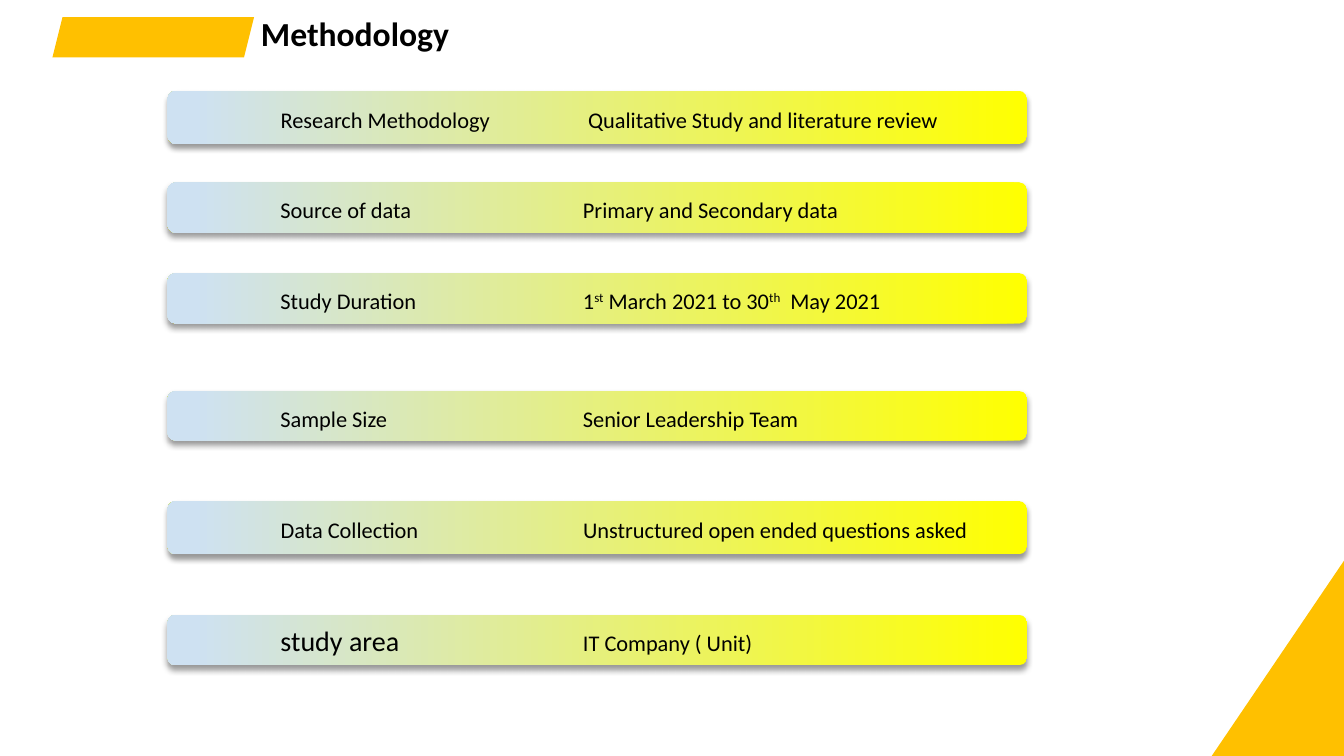
from lxml import etree
from pptx import Presentation
from pptx.dml.color import RGBColor
from pptx.enum.shapes import MSO_SHAPE
from pptx.enum.text import MSO_ANCHOR, PP_ALIGN
from pptx.oxml.ns import qn
from pptx.util import Inches, Pt

ROUNDED = MSO_SHAPE.ROUNDED_RECTANGLE
RECTANGLE = MSO_SHAPE.RECTANGLE
PARALLELOGRAM = MSO_SHAPE.PARALLELOGRAM
MIDDLE = MSO_ANCHOR.MIDDLE
LEFT = PP_ALIGN.LEFT

COLORS = {
    "amber": "FFC000",
    "yellow": "FFFF00",
    "pale_blue": "CEE1F2",
    "text": "000000",
}
FONT = "Calibri"
BAR_LEFT, BAR_WIDTH = 1.66, 8.53
TAB_STOPS = (1, 4)

# top, height, label, label size, value as (text, is superscript) parts
BARS = [
    (0.9, 0.53, "Research Methodology", 16,
     [(" Qualitative Study and literature review", False)]),
    (1.81, 0.5, "Source of data", 16, [("Primary and Secondary data", False)]),
    (2.71, 0.5, "Study Duration", 16,
     [("1", False), ("st", True), (" March 2021 to 30", False),
      ("th", True), ("  May 2021", False)]),
    (3.88, 0.49, "Sample Size", 16, [("Senior Leadership Team", False)]),
    (4.97, 0.53, "Data Collection", 16,
     [("Unstructured open ended questions asked", False)]),
    (6.1, 0.5, "study area", 20, [("IT Company ( Unit)", False)]),
]


def rgb(name):
    return RGBColor.from_string(COLORS[name])


def add_run(paragraph, text, size, bold=False, superscript=False):
    run = paragraph.add_run()
    run.text = text
    run.font.name = FONT
    run.font.size = Pt(size)
    run.font.bold = bold
    run.font.color.rgb = rgb("text")
    if superscript:
        run._r.get_or_add_rPr().set("baseline", "30000")


def add_plain_shape(slide, kind, left, top, width, height):
    """Add a preset shape without outline or shadow."""
    shape = slide.shapes.add_shape(
        kind, Inches(left), Inches(top), Inches(width), Inches(height))
    shape.shadow.inherit = False
    shape.line.fill.background()
    return shape


def add_accent(slide, kind, left, top, width, height, rotation=0):
    shape = add_plain_shape(slide, kind, left, top, width, height)
    shape.fill.solid()
    shape.fill.fore_color.rgb = rgb("amber")
    shape.rotation = rotation


def fill_gradient(shape):
    shape.fill.gradient()
    shape.fill.gradient_angle = 180
    first, last = shape.fill.gradient_stops
    first.color.rgb = rgb("yellow")
    first.position = 0
    last.color.rgb = rgb("pale_blue")
    last.position = 0.97


def add_drop_shadow(shape):
    effects = shape._element.spPr.find(qn("a:effectLst"))
    shadow = etree.SubElement(
        effects, qn("a:outerShdw"), blurRad=str(Pt(4)), dist=str(Pt(3)),
        dir="5400000", algn="t", rotWithShape="0")
    color = etree.SubElement(shadow, qn("a:srgbClr"), val=COLORS["text"])
    etree.SubElement(color, qn("a:alpha"), val="40000")


def set_tab_stops(paragraph):
    tab_list = etree.SubElement(paragraph._p.get_or_add_pPr(), qn("a:tabLst"))
    for position in TAB_STOPS:
        etree.SubElement(tab_list, qn("a:tab"), pos=str(Inches(position)), algn="l")


def add_bar(slide, top, height, label, label_size, value_parts):
    bar = add_plain_shape(slide, ROUNDED, BAR_LEFT, top, BAR_WIDTH, height)
    fill_gradient(bar)
    add_drop_shadow(bar)
    bar.text_frame.vertical_anchor = MIDDLE
    paragraph = bar.text_frame.paragraphs[0]
    paragraph.alignment = LEFT
    set_tab_stops(paragraph)
    add_run(paragraph, "\t", 20)
    add_run(paragraph, label + "\t", label_size)
    for text, superscript in value_parts:
        add_run(paragraph, text, 16, superscript=superscript)


def add_title(slide, text):
    box = slide.shapes.add_textbox(
        Inches(2.49), Inches(0.12), Inches(8), Inches(0.5))
    box.text_frame.word_wrap = True
    paragraph = box.text_frame.paragraphs[0]
    paragraph.line_spacing = 0.9
    add_run(paragraph, text, 24, bold=True)


def main():
    presentation = Presentation()
    presentation.slide_width = Inches(13.33)
    presentation.slide_height = Inches(7.5)
    slide = presentation.slides.add_slide(presentation.slide_layouts[6])
    add_title(slide, "Methodology")
    add_accent(slide, PARALLELOGRAM, 0.52, 0.17, 2, 0.4)
    add_accent(slide, RECTANGLE, 12.56, 5.63, 1.21, 2.51, rotation=34.1)
    for bar in BARS:
        add_bar(slide, *bar)
    presentation.save("out.pptx")


if __name__ == "__main__":
    main()
